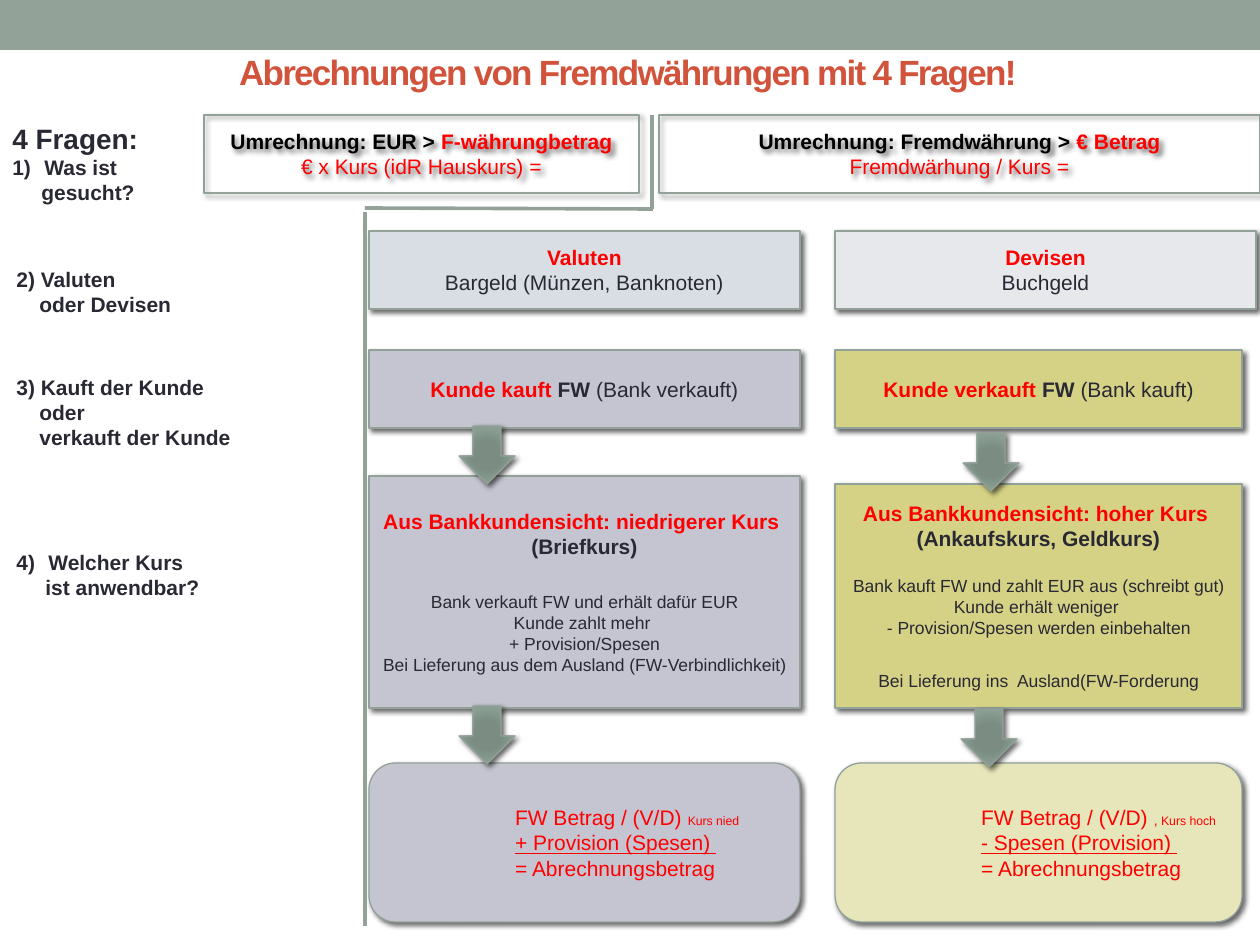
from lxml.etree import SubElement
from pptx import Presentation
from pptx.dml.color import RGBColor
from pptx.enum.shapes import MSO_CONNECTOR, MSO_SHAPE
from pptx.enum.text import MSO_ANCHOR, MSO_AUTO_SIZE, PP_ALIGN
from pptx.oxml import parse_xml
from pptx.oxml.ns import nsdecls, qn
from pptx.util import Pt

PX = 914400 / 126
SAGE = RGBColor(0x93, 0xA2, 0x99)
RUST = RGBColor(0xD2, 0x53, 0x3C)
RED = RGBColor(0xFF, 0, 0)
BLACK = RGBColor(0, 0, 0)
INK = RGBColor(0x29, 0x29, 0x34)
ICE = RGBColor(0xD9, 0xDE, 0xE4)
MIST = RGBColor(0xE6, 0xE8, 0xEC)
LILAC = RGBColor(0xC5, 0xC5, 0xD1)
OLIVE = RGBColor(0xD5, 0xD2, 0x86)
CREAM = RGBColor(0xE7, 0xE5, 0xBA)
ARROW_STOPS = [(0, "7B8E82"), (34, "7B8D83"), (70, "8A9E92"), (100, "93A299")]


def run(text, color=INK, size=12, bold=False, underline=False):
    return text, color, dict(size=Pt(size), bold=bold, underline=underline)


def para(*runs, before=0, indent=0, hanging=0, number=None):
    return dict(runs=runs, before=before, indent=indent, hanging=hanging, number=number)


def small(text, before=0):
    return para(run(text, size=10), before=before)


def question(text, **layout):
    return para(run(text, bold=True), **layout)


def formula(*runs):
    return para(*runs, indent=126)


def red(text, **style):
    return run(text, RED, **style)


TITLE = [para(run("Abrechnungen von Fremdwährungen mit 4 Fragen!", RUST, 20, True))]

CONVERSIONS = [
    ((204, 115, 435, 78), None,
     [para(run("Umrechnung: EUR > ", BLACK, bold=True), red("F-währungbetrag", bold=True)),
      para(red("€ x Kurs (idR Hauskurs) ="))]),
    ((659, 115, 601, 78), None,
     [para(run("Umrechnung: Fremdwährung > ", BLACK, bold=True), red("€ Betrag", bold=True)),
      para(red("Fremdwärhung / Kurs ="))]),
]

LEFT, LEFT_WIDTH = 369, 431
RIGHT, RIGHT_WIDTH = 835, 407
DECISIONS = [
    ((LEFT, 231, LEFT_WIDTH, 78), ICE,
     [para(red("Valuten", bold=True)), para(run("Bargeld (Münzen, Banknoten)"))]),
    ((RIGHT, 231, 421, 78), MIST,
     [para(red("Devisen", bold=True)), para(run("Buchgeld"))]),
    ((LEFT, 350, LEFT_WIDTH, 78), LILAC,
     [para(red("Kunde kauft ", bold=True), run("FW ", bold=True), run("(Bank verkauft)"))]),
    ((RIGHT, 350, RIGHT_WIDTH, 78), OLIVE,
     [para(red("Kunde verkauft ", bold=True), run("FW ", bold=True), run("(Bank kauft)"))]),
    ((LEFT, 476, LEFT_WIDTH, 232), LILAC,
     [para(red("Aus Bankkundensicht: niedrigerer Kurs ", bold=True)),
      para(run("(Briefkurs)", bold=True)),
      small("Bank verkauft FW und erhält dafür EUR", before=18.4),
      small("Kunde zahlt mehr "),
      small("+ Provision/Spesen"),
      small("Bei Lieferung aus dem Ausland (FW-Verbindlichkeit)")]),
    ((RIGHT, 484, RIGHT_WIDTH, 224), OLIVE,
     [para(red("Aus Bankkundensicht: hoher Kurs ", bold=True)),
      para(run("(Ankaufskurs, Geldkurs)", bold=True)),
      small("Bank kauft FW und zahlt EUR aus (schreibt gut)", before=13.8),
      small("Kunde erhält weniger "),
      small("- Provision/Spesen werden einbehalten"),
      small("Bei Lieferung ins  Ausland(FW-Forderung", before=18.4)]),
]

RESULTS = [
    ((LEFT, 763, LEFT_WIDTH, 159), LILAC,
     [formula(red("FW Betrag / (V/D) "), red("Kurs nied", size=7)),
      formula(red("+ Provision (Spesen) ", underline=True)),
      formula(red("= Abrechnungsbetrag"))]),
    ((RIGHT, 763, RIGHT_WIDTH, 159), CREAM,
     [formula(red("FW Betrag / (V/D) "), red(",", size=8), red(" Kurs hoch", size=7)),
      formula(red("- Spesen (Provision) ", underline=True)),
      formula(red("= Abrechnungsbetrag"))]),
]

QUESTIONS = [
    ((0, 115, 152, 97), False,
     [para(run("4 Fragen:", size=16, bold=True)),
      question("Was ist", indent=32, hanging=32, number=1),
      question("gesucht?", indent=29)]),
    ((4, 260, 188, 63), False,
     [question("2) Valuten"), question("oder Devisen", indent=23)]),
    ((4, 368, 242, 89), False,
     [question("3) Kauft der Kunde"), question("oder", indent=23),
      question("verkauft der Kunde", indent=23)]),
    ((4, 543, 242, 63), True,
     [question("Welcher Kurs", indent=32, hanging=32, number=4),
      question("ist anwendbar?", indent=29)]),
]

ARROW_SIZE = (56, 58)
ARROWS = [(459, 426), (963, 433), (459, 706), (961, 709)]
DIVIDERS = [(365, 208, 653, 209), (652, 209, 652, 115), (365, 926, 365, 212)]


def emu(*lengths):
    return [round(length * PX) for length in lengths]


def write(frame, paragraphs, align):
    for i, content in enumerate(paragraphs):
        p = frame.paragraphs[0] if i == 0 else frame.add_paragraph()
        p.alignment = align
        p.space_before = Pt(content["before"])
        props = p._p.get_or_add_pPr()
        indent, hanging = emu(content["indent"], content["hanging"])
        props.set("marL", str(indent))
        props.set("indent", str(-hanging))
        if content["number"]:
            SubElement(props, qn("a:buAutoNum"), type="arabicParenR",
                       startAt=str(content["number"]))
        for text, color, style in content["runs"]:
            r = p.add_run()
            r.text = text
            r.font.name = "Arial"
            r.font.color.rgb = color
            for attribute, value in style.items():
                setattr(r.font, attribute, value)


def add_text(slide, place, paragraphs, align, wrap, **frame_format):
    frame = slide.shapes.add_textbox(*emu(*place)).text_frame
    frame.word_wrap = wrap
    for attribute, value in frame_format.items():
        setattr(frame, attribute, value)
    write(frame, paragraphs, align)
    return frame


def add_shadowed(slide, kind, place, fill=None):
    shape = slide.shapes.add_shape(kind, *emu(*place))
    if fill is None:
        shape.fill.background()
    else:
        shape.fill.solid()
        shape.fill.fore_color.rgb = fill
    shape.line.color.rgb = SAGE
    shape.line.width = Pt(0.75)
    shape._element.spPr.append(parse_xml(
        f'<a:effectLst {nsdecls("a")}><a:outerShdw blurRad="{Pt(3)}" dist="{Pt(2)}" '
        'dir="2700000" rotWithShape="0"><a:srgbClr val="000000"><a:alpha val="60000"/>'
        '</a:srgbClr></a:outerShdw></a:effectLst>'))
    return shape


def add_box(slide, kind, place, fill, paragraphs, align):
    frame = add_shadowed(slide, kind, place, fill).text_frame
    frame.word_wrap = True
    frame.vertical_anchor = MSO_ANCHOR.MIDDLE
    write(frame, paragraphs, align)


def add_arrow(slide, left, top):
    arrow = add_shadowed(slide, MSO_SHAPE.DOWN_ARROW, (left, top, *ARROW_SIZE), SAGE)
    stops = "".join(f'<a:gs pos="{at * 1000}"><a:srgbClr val="{color}"/></a:gs>'
                    for at, color in ARROW_STOPS)
    props = arrow._element.spPr
    props.replace(props.find(qn("a:solidFill")), parse_xml(
        f'<a:gradFill {nsdecls("a")} rotWithShape="1"><a:gsLst>{stops}</a:gsLst>'
        '<a:path path="circle"><a:fillToRect l="100000" t="100000" r="100000" b="100000"/>'
        '</a:path></a:gradFill>'))


def add_divider(slide, ends):
    line = slide.shapes.add_connector(MSO_CONNECTOR.STRAIGHT, *emu(*ends))
    line.line.color.rgb = SAGE
    line.line.width = Pt(2.08)
    SubElement(line._element.spPr, qn("a:effectLst"))


def main():
    prs = Presentation()
    prs.slide_width, prs.slide_height = emu(1260, 945)
    slide = prs.slides.add_slide(prs.slide_layouts[6])

    band = slide.shapes.add_shape(MSO_SHAPE.RECTANGLE, *emu(0, 0, 1260, 50))
    band.shadow.inherit = False
    band.fill.solid()
    band.fill.fore_color.rgb = SAGE
    band.line.fill.background()

    title = add_text(slide, (20, 47, 1215, 49), TITLE, PP_ALIGN.CENTER, True,
                     vertical_anchor=MSO_ANCHOR.MIDDLE)
    title.paragraphs[0].runs[0].font._element.set("spc", "-100")

    for box in CONVERSIONS + DECISIONS:
        add_box(slide, MSO_SHAPE.RECTANGLE, *box, PP_ALIGN.CENTER)
    for box in RESULTS:
        add_box(slide, MSO_SHAPE.ROUNDED_RECTANGLE, *box, PP_ALIGN.LEFT)
    for corner in ARROWS:
        add_arrow(slide, *corner)
    for place, wrap, paragraphs in QUESTIONS:
        add_text(slide, place, paragraphs, PP_ALIGN.LEFT, wrap,
                 auto_size=MSO_AUTO_SIZE.SHAPE_TO_FIT_TEXT)
    for ends in DIVIDERS:
        add_divider(slide, ends)
    prs.save("out.pptx")


if __name__ == "__main__":
    main()
